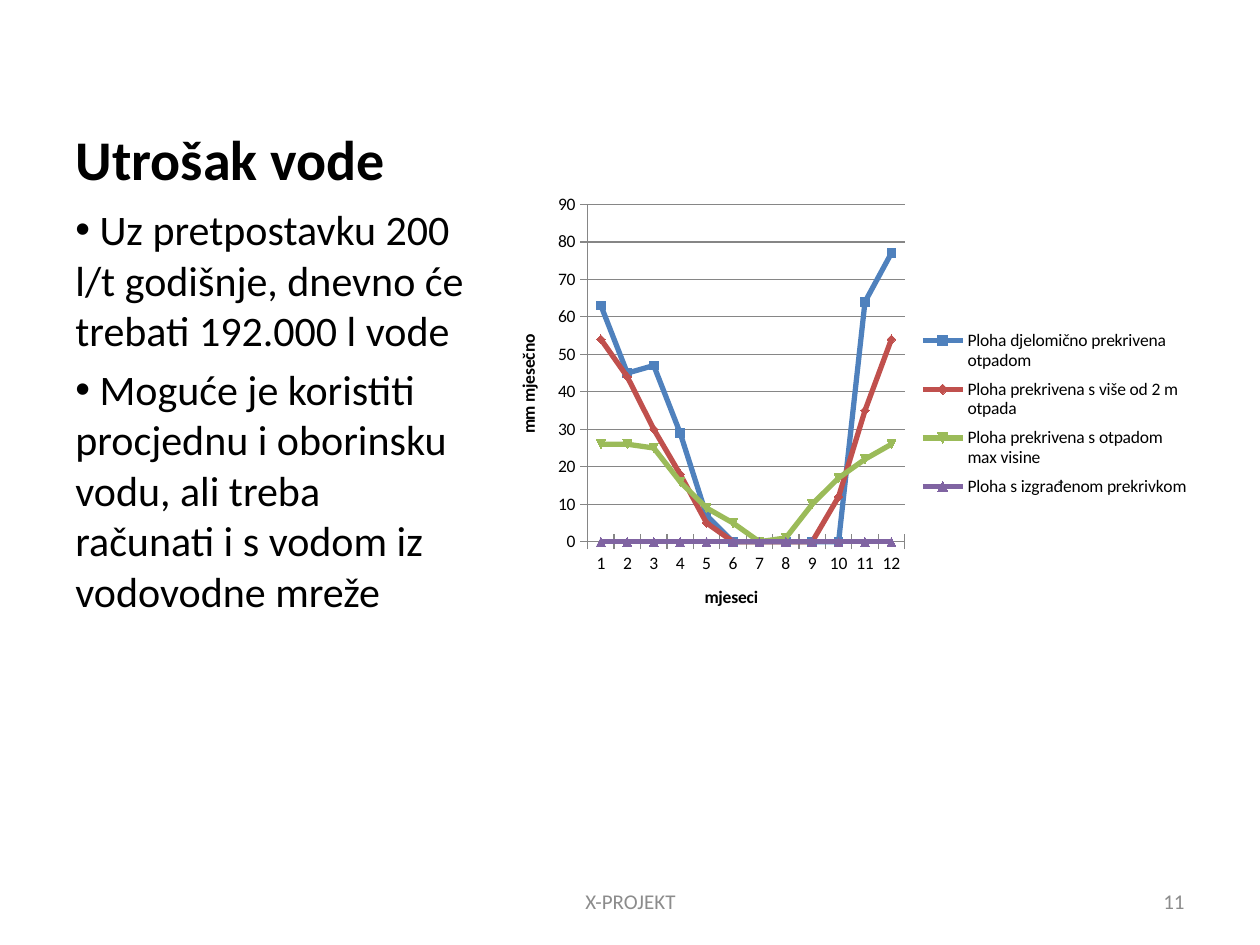
"""Build the water use slide with a line chart by month."""
from lxml.etree import SubElement
from pptx import Presentation
from pptx.chart.data import CategoryChartData
from pptx.dml.color import RGBColor
from pptx.enum.chart import XL_CHART_TYPE, XL_LEGEND_POSITION, XL_TICK_MARK
from pptx.enum.text import MSO_ANCHOR, PP_ALIGN
from pptx.oxml import parse_xml
from pptx.oxml.ns import nsdecls, qn
from pptx.util import Inches, Pt

THEME = {
    "font": "Calibri", "ink": "000000", "mute": "8C8C8C", "grid": "868686",
    "title": 32, "body": 24, "foot": 12, "chart": 10,
    "lines": ("4F81BD", "C0504D", "9BBB59", "8064A2"),
}
TITLE = "Utrošak vode"
POINTS = (
    "Uz pretpostavku 200 l/t godišnje, dnevno će trebati 192.000 l vode",
    "Moguće je koristiti procjednu i oborinsku vodu, ali treba računati i s vodom iz vodovodne mreže",
)
MONTHS = [str(n) for n in range(1, 13)]
SERIES = {
    "Ploha djelomično prekrivena otpadom": (63, 45, 47, 29, 7, 0, 0, 0, 0, 0, 64, 77),
    "Ploha prekrivena s više od 2 m otpada": (54, 44, 30, 18, 5, 0, 0, 0, 0, 12, 35, 54),
    "Ploha prekrivena s otpadom max visine": (26, 26, 25, 16, 9, 5, 0, 1, 10, 17, 22, 26),
    "Ploha s izgrađenom prekrivkom": (0,) * 12,
}
AXES = ("mjeseci", "mm mjesečno")
FOOTER = (
    ("11", (7.17, 6.95, 2.33, 0.4), PP_ALIGN.RIGHT),
    ("X-PROJEKT", (3.42, 6.95, 3.17, 0.4), PP_ALIGN.CENTER),
)
PLOT_BOX = (0.135, 0.04, 0.45, 0.75)
KEY_BOX = (0.61, 0.3, 0.38, 0.41)


def tint(name):
    return RGBColor.from_string(name)


def style(font, size, color, bold=False):
    font.name, font.size, font.bold = THEME["font"], Pt(size), bold
    font.color.rgb = tint(color)


def write(para, text, size, color, bold=False):
    run = para.add_run()
    run.text = text
    style(run.font, size, color, bold)


def add_box(slide, box):
    frame = slide.shapes.add_textbox(*map(Inches, box)).text_frame
    frame.word_wrap = True
    return frame


def add_bullet(para):
    props = para._p.get_or_add_pPr()
    props.set("marL", "0")
    props.set("indent", "0")
    space = SubElement(SubElement(props, qn("a:spcBef")), qn("a:spcPct"))
    space.set("val", "20000")
    SubElement(props, qn("a:buFont")).set("typeface", "Arial")
    SubElement(props, qn("a:buChar")).set("char", "•")


def place(part, index, box, inner=False):
    for old in part.findall(qn("c:layout")):
        part.remove(old)
    layout = parse_xml(f"<c:layout {nsdecls('c')}><c:manualLayout/></c:layout>")
    pairs = [("layoutTarget", "inner")] if inner else []
    pairs += [("xMode", "edge"), ("yMode", "edge"), *zip("xywh", box)]
    for tag, val in pairs:
        SubElement(layout[0], qn(f"c:{tag}")).set("val", str(val))
    part.insert(index, layout)


def add_graph(slide):
    data = CategoryChartData()
    data.categories = MONTHS
    for name, vals in SERIES.items():
        data.add_series(name, vals)
    box = map(Inches, (3.91, 1.48, 5.59, 3.57))
    chart = slide.shapes.add_chart(XL_CHART_TYPE.LINE_MARKERS, *box, data).chart
    style(chart.font, THEME["chart"], THEME["ink"])
    chart.has_title = False
    chart.has_legend = True
    chart.legend.position = XL_LEGEND_POSITION.RIGHT
    chart.legend.include_in_layout = False
    plot = chart.plots[0]
    plot.vary_by_categories = False
    for line, color in zip(plot.series, THEME["lines"]):
        line.smooth = False
        line.format.line.width = Pt(3)
        line.format.line.color.rgb = tint(color)
        mark = line.marker.format
        mark.fill.solid()
        mark.fill.fore_color.rgb = tint(color)
        mark.line.color.rgb = tint(color)
    for axis, name in zip((chart.category_axis, chart.value_axis), AXES):
        para = axis.axis_title.text_frame.paragraphs[0]
        write(para, name, THEME["chart"], THEME["ink"], True)
        axis.major_tick_mark = XL_TICK_MARK.CROSS
        axis.minor_tick_mark = XL_TICK_MARK.NONE
        axis.format.line.color.rgb = tint(THEME["grid"])
    scale = chart.value_axis
    scale.minimum_scale, scale.maximum_scale, scale.major_unit = 0, 90, 10
    scale.has_major_gridlines = True
    scale.major_gridlines.format.line.color.rgb = tint(THEME["grid"])
    place(chart._chartSpace.chart.plotArea, 0, PLOT_BOX, True)
    place(chart.legend._element, 1, KEY_BOX)


def main():
    deck = Presentation()
    deck.slide_width, deck.slide_height = Inches(10), Inches(7.5)
    slide = deck.slides.add_slide(deck.slide_layouts[5])
    title = slide.shapes.title
    title.left, title.top, title.width, title.height = map(Inches, (0.5, 0.3, 3.29, 1.27))
    frame = title.text_frame
    frame.vertical_anchor = MSO_ANCHOR.BOTTOM
    frame.paragraphs[0].alignment = PP_ALIGN.LEFT
    write(frame.paragraphs[0], TITLE, THEME["title"], THEME["ink"], True)

    frame = add_box(slide, (0.5, 1.57, 3.29, 5.13))
    for i, text in enumerate(POINTS):
        para = frame.add_paragraph() if i else frame.paragraphs[0]
        add_bullet(para)
        write(para, f" {text}", THEME["body"], THEME["ink"])

    add_graph(slide)
    for text, box, align in FOOTER:
        frame = add_box(slide, box)
        frame.vertical_anchor = MSO_ANCHOR.MIDDLE
        frame.paragraphs[0].alignment = align
        write(frame.paragraphs[0], text, THEME["foot"], THEME["mute"])
    deck.save("out.pptx")


if __name__ == "__main__":
    main()
